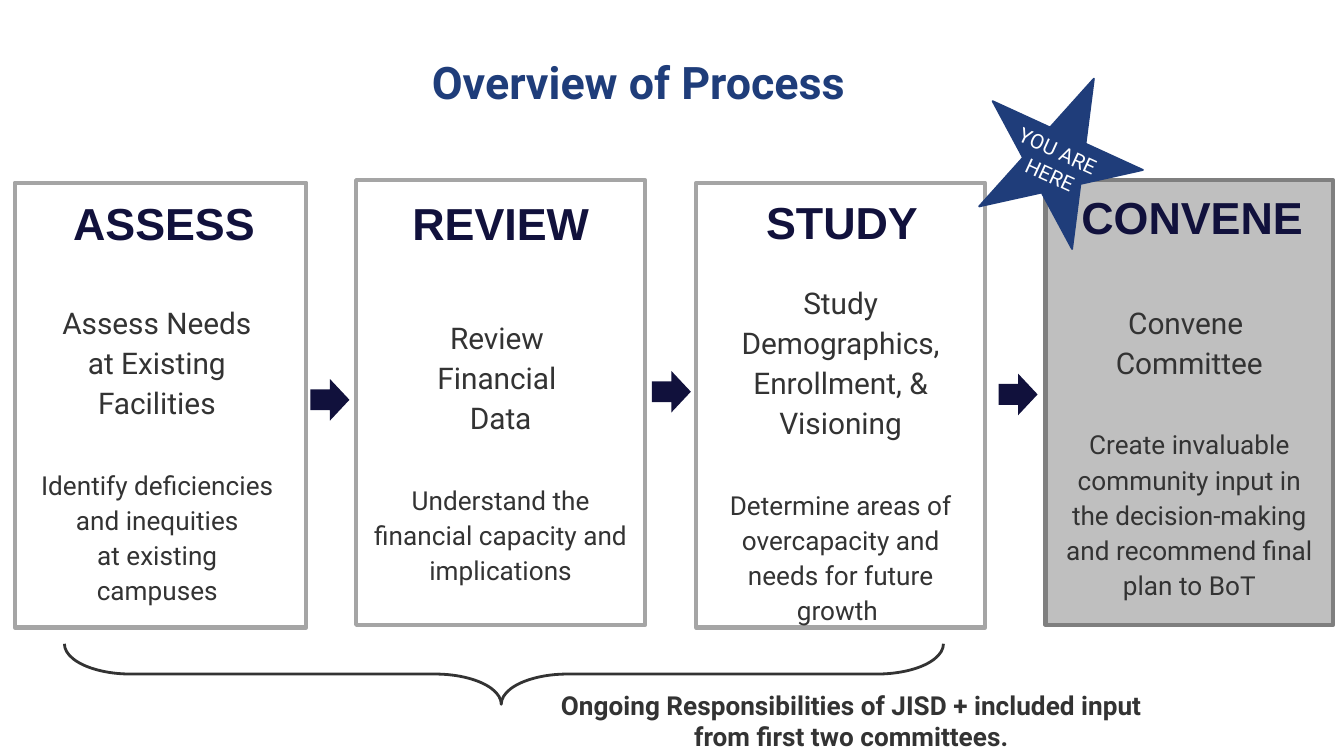
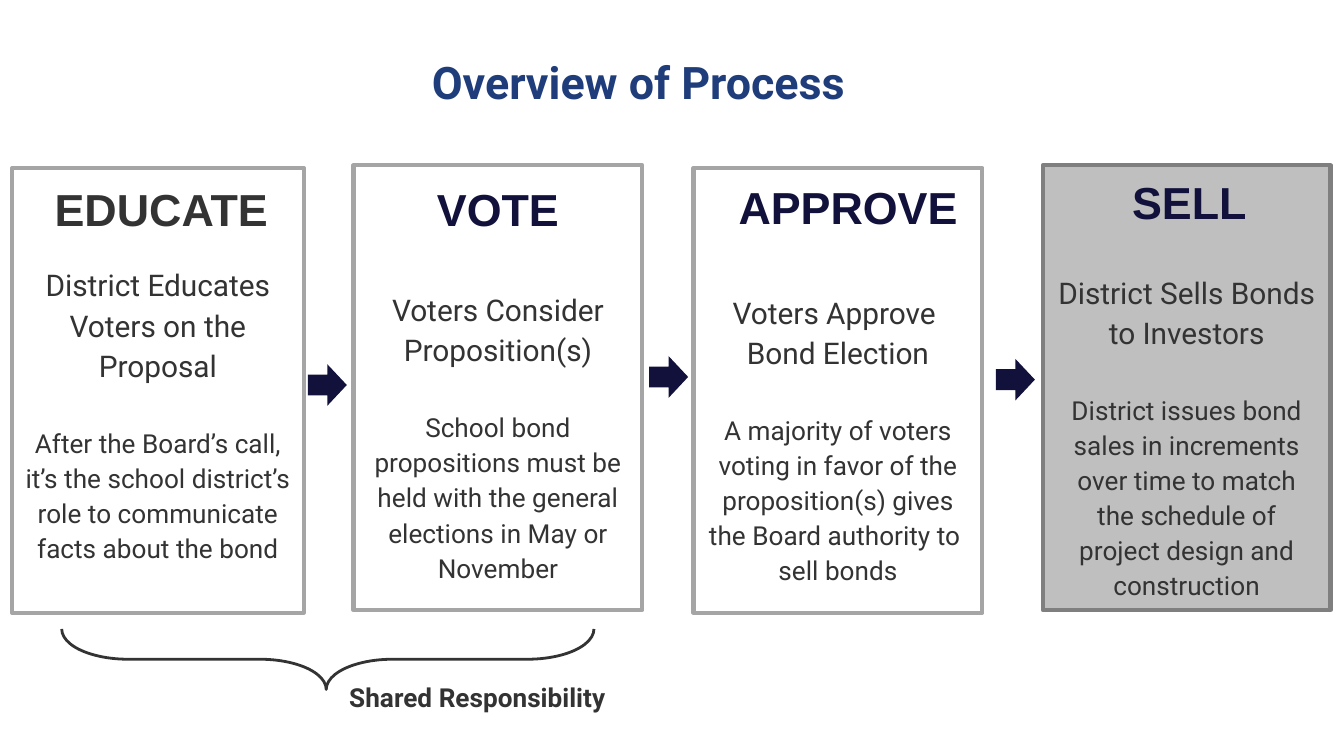
import pptx
import pptx.dml.color
import pptx.enum.shapes
import pptx.enum.text
import pptx.util

SHAPE = pptx.enum.shapes.MSO_SHAPE
ALIGN = pptx.enum.text.PP_ALIGN
ANCHOR = pptx.enum.text.MSO_ANCHOR

# Theme: colours, fonts and type sizes
THEME = {
    "blue": "1F3D7A", "navy": "11113C", "ink": "333333", "white": "FFFFFF",
    "plain_line": "A5A5A5", "final_line": "7F7F7F", "final_fill": "BFBFBF",
    "text_font": "Roboto", "heading_font": "Arial",
    "title": 24, "heading": 24, "lead": 16, "detail": 14, "star": 11,
    "card_spacing": 1.12,
}

# Content: lead and detail are lists of paragraphs
TITLE = "Overview of Process"
SLIDES = [
    {
        "shift": (0, 0),
        "detail_gap": 24,
        "cards": [
            {"heading": "ASSESS",
             "lead": ["Assess Needs ", "at Existing ", "Facilities "],
             "detail": ["Identify deficiencies ", "and inequities ",
                        "at existing ", "campuses "]},
            {"heading": "REVIEW",
             "lead": ["Review ", "Financial ", "Data"],
             "detail": ["Understand the financial capacity and implications"]},
            {"heading": "STUDY",
             "lead": ["Study Demographics, Enrollment, & Visioning"],
             "detail": ["Determine areas of overcapacity and needs for future growth "]},
            {"heading": "CONVENE",
             "lead": ["Convene ", "Committee"],
             "detail": ["Create invaluable community input in the decision-making "
                        "and recommend final plan to BoT"]},
        ],
        "brace_width": 6.54,
        "note": ("Ongoing Responsibilities of JISD + included input "
                 "from first two committees.", 3.86, 5.08, ALIGN.CENTER),
        "star": ["YOU ARE ", "HERE"],
    },
    {
        "shift": (-0.02, -0.11),
        "detail_gap": 21.5,
        "cards": [
            {"heading": "EDUCATE", "heading_color": "ink", "insets": (0.69, 0.35),
             "lead": ["District Educates Voters on the Proposal"],
             "detail": ["After the Board’s call, it’s the school district’s role "
                        "to communicate facts about the bond"]},
            {"heading": "VOTE",
             "lead": ["Voters Consider Proposition(s)"],
             "detail": ["School bond propositions must be held with the general "
                        "elections in May or November"]},
            {"heading": "APPROVE", "heading_span": (0.23, 1.84),
             "lead": ["Voters Approve ", "Bond Election"],
             "detail": ["A majority of voters voting in favor of the proposition(s) "
                        "gives the Board authority to ", "sell bonds"]},
            {"heading": "SELL",
             "lead": ["District Sells Bonds to Investors"],
             "detail": ["District issues bond sales in increments over time to match "
                        "the schedule of project design and construction"]},
        ],
        "brace_width": 3.96,
        "note": ("Shared Responsibility", 2.5, 5.02, ALIGN.LEFT),
    },
]

# Grid: card left, top, width; heading offset from the card and heading width
PAGE_WIDTH = 10
PAGE_HEIGHT = PAGE_WIDTH * 9 / 16
COLUMNS = [
    {"card": (0.11, 1.36, 2.17), "heading": (0.08, 0.05, 2.06)},
    {"card": (2.65, 1.34, 2.15), "heading": (0.2, 0.07, 1.75)},
    {"card": (5.18, 1.36, 2.15), "heading": (0.32, 0.04, 1.53)},
    {"card": (7.78, 1.34, 2.14), "heading": (0.02, 0.02, 2.14)},
]
ARROWS = [(2.31, 2.82), (4.85, 2.76), (7.43, 2.78)]
CARD_HEIGHT, HEADING_HEIGHT = 3.31, 0.57
CARD_INSETS = (0.76, 0.05)
BRACE_LEFT, BRACE_TOP, BRACE_DEPTH = 0.48, 4.79, 0.45
STAR_TURN = 24.6


def inches(*lengths):
    return [pptx.util.Inches(length) for length in lengths]


def color(name):
    return pptx.dml.color.RGBColor.from_string(THEME[name])


def write(frame, lines, size, ink, font="text_font", bold=False,
          align=ALIGN.CENTER, spacing=None):
    """Fill a frame with (text, size, space before) lines or plain strings."""
    frame.word_wrap = True
    for index, line in enumerate(lines):
        text, points, before = line if isinstance(line, tuple) else (line, size, 0)
        para = frame.paragraphs[0] if index == 0 else frame.add_paragraph()
        para.text = text
        para.alignment = align
        para.space_before = pptx.util.Pt(before)
        if spacing:
            para.line_spacing = spacing
        for span in para.runs:
            span.font.name = THEME[font]
            span.font.size = pptx.util.Pt(THEME[points])
            span.font.bold = bold
            span.font.color.rgb = color(ink)


def add_shape(shapes, kind, place, fill=None, line=None, width=1):
    shape = shapes.add_shape(kind, *inches(*place))
    shape.shadow.inherit = False
    if fill:
        shape.fill.solid()
        shape.fill.fore_color.rgb = color(fill)
    else:
        shape.fill.background()
    if line:
        shape.line.color.rgb = color(line)
        shape.line.width = pptx.util.Pt(width)
    else:
        shape.line.fill.background()
    return shape


def add_label(shapes, place, lines, size, ink, **style):
    box = shapes.add_textbox(*inches(*place))
    write(box.text_frame, lines, size, ink, **style)
    return box


def add_title(page):
    title = page.shapes.title
    title.left, title.top, title.width, title.height = inches(1.02, 0.4, 7.56, 0.47)
    frame = title.text_frame
    frame.auto_size = pptx.enum.text.MSO_AUTO_SIZE.NONE
    frame.vertical_anchor = ANCHOR.TOP
    frame.margin_left = 0
    write(frame, [TITLE], "title", "blue", bold=True, spacing=0.9)


def add_card(page, card, place, final, gap):
    box = add_shape(page.shapes, SHAPE.RECTANGLE, place,
                    "final_fill" if final else None,
                    "final_line" if final else "plain_line", 2.25)
    frame = box.text_frame
    frame.vertical_anchor = ANCHOR.MIDDLE
    frame.margin_top, frame.margin_bottom = inches(*card.get("insets", CARD_INSETS))
    lines = [(text, "lead", 0) for text in card["lead"]]
    lines += [(text, "detail", 0 if index else gap)
              for index, text in enumerate(card["detail"])]
    write(frame, lines, "lead", "ink", spacing=THEME["card_spacing"])


def add_brace(page, left, top, width):
    # The brace is drawn upright, then turned about its centre
    middle_x, middle_y = left + width / 2, top + BRACE_DEPTH / 2
    place = (middle_x - BRACE_DEPTH / 2, middle_y - width / 2, BRACE_DEPTH, width)
    brace = add_shape(page.shapes, SHAPE.LEFT_BRACE, place, line="ink", width=1.5)
    brace.adjustments[0], brace.adjustments[1] = 1.096, 0.497
    brace.rotation = 270


def add_star(page, lines):
    group = page.shapes.add_group_shape()
    star = add_shape(group.shapes, SHAPE.STAR_5_POINT, (7.27, 0.53, 1.23, 1.22),
                     "blue", "blue")
    label = add_label(group.shapes, (6.95, 0.98, 1.8, 0.47), lines, "star", "white")
    star.rotation = label.rotation = STAR_TURN


def add_page(deck, content):
    page = deck.slides.add_slide(deck.slide_layouts[5])
    add_title(page)
    dx, dy = content["shift"]
    headings = []

    # Cards
    for column, card in zip(COLUMNS, content["cards"]):
        left, top, width = column["card"]
        left, top = left + dx, top + dy
        add_card(page, card, (left, top, width, CARD_HEIGHT),
                 column is COLUMNS[-1], content["detail_gap"])
        inset, drop, span = column["heading"]
        inset, span = card.get("heading_span", (inset, span))
        headings.append((card, (left + inset, top + drop, span, HEADING_HEIGHT)))

    # Arrows between the cards
    for left, top in ARROWS:
        add_shape(page.shapes, SHAPE.RIGHT_ARROW,
                  (left + dx, top + dy, 0.29, 0.31), "navy")

    # Headings
    for card, place in headings:
        add_label(page.shapes, place, [card["heading"]], "heading",
                  card.get("heading_color", "navy"), font="heading_font", bold=True)

    # Brace, its note and the marker
    add_brace(page, BRACE_LEFT + dx, BRACE_TOP + dy, content["brace_width"])
    text, left, top, align = content["note"]
    add_label(page.shapes, (left, top, 4.95, 0.45), [text], "detail", "ink",
              bold=True, align=align)
    if "star" in content:
        add_star(page, content["star"])


def main():
    deck = pptx.Presentation()
    deck.slide_width, deck.slide_height = inches(PAGE_WIDTH, PAGE_HEIGHT)
    for content in SLIDES:
        add_page(deck, content)
    deck.save("out.pptx")


if __name__ == "__main__":
    main()
